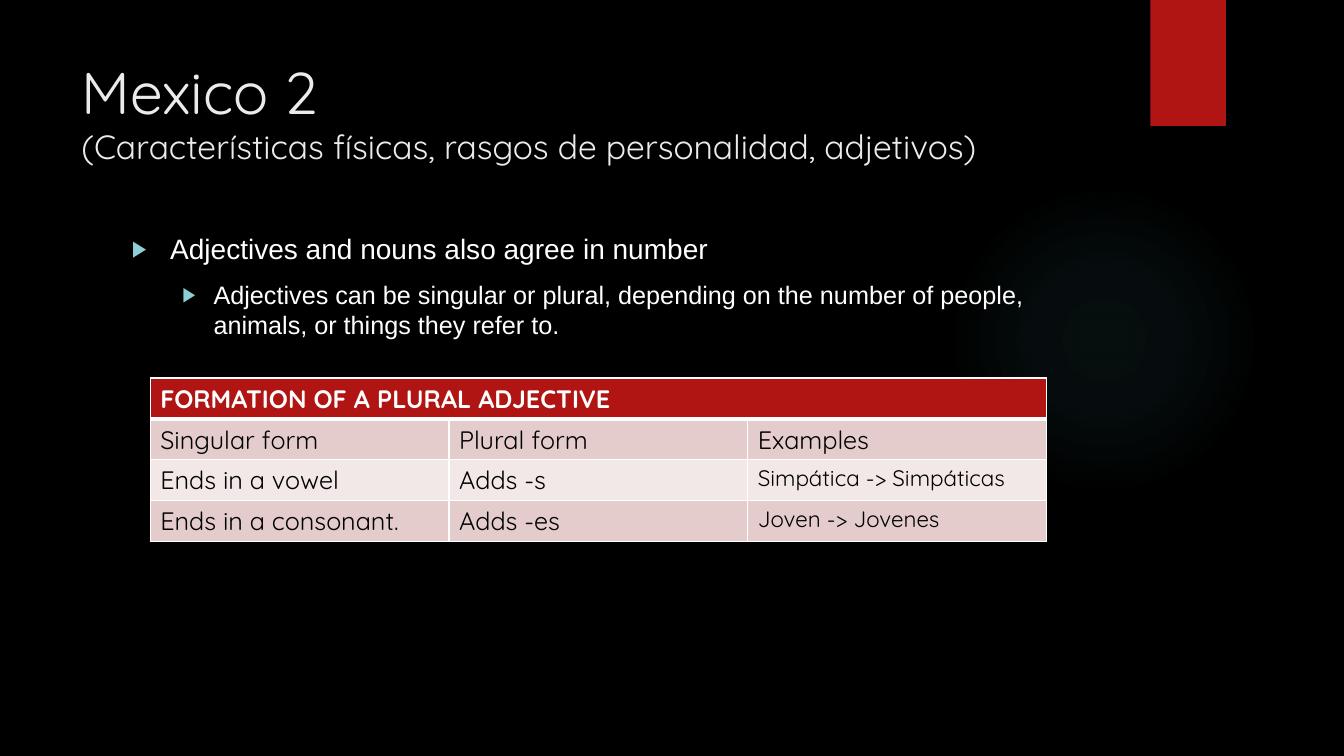
"""Builds the slide on forming plural adjectives in Spanish."""
import pptx
import pptx.dml.color
import pptx.enum.shapes
import pptx.enum.text
import pptx.oxml
import pptx.oxml.ns
import pptx.util
from pptx.util import Inches, Pt

TITLE_LINES = [
    ("Mexico 2", 42),
    ("(Características físicas, rasgos de personalidad, adjetivos)", 24),
]
BULLETS = [
    ("Adjectives and nouns also agree in number", 20, 0.38, 0.38),
    ("Adjectives can be singular or plural, depending on the number of "
     "people, animals, or things they refer to.", 18, 0.81, 0.31),
]
TABLE_HEADING = "FORMATION OF A PLURAL ADJECTIVE"
TABLE_ROWS = [
    ("Singular form", "Plural form", "Examples"),
    ("Ends in a vowel", "Adds -s", "Simpática -> Simpáticas"),
    ("Ends in a consonant.", "Adds -es", "Joven -> Jovenes"),
]
BAND_COLORS = ["E4CCCC", "F2E8E7"]
GLOW_STOPS = [(0, 7), (36, 6), (69, 0)]
RED, WHITE, BLACK = "B01513", "FFFFFF", "000000"
COLUMN_WIDTH, ROW_HEIGHT = 2.963, 0.405
NAMESPACE = pptx.oxml.ns.nsdecls("a")


def color(value):
    return pptx.dml.color.RGBColor.from_string(value)


def style(font, name, size, value, bold=False):
    font.name = name
    font.size = Pt(size)
    font.bold = bold
    font.color.rgb = color(value)


def add_plain_shape(slide, kind, left, top, width, height):
    shape = slide.shapes.add_shape(
        kind, Inches(left), Inches(top), Inches(width), Inches(height))
    shape.shadow.inherit = False
    shape.line.fill.background()
    return shape


def add_glow(slide):
    glow = add_plain_shape(
        slide, pptx.enum.shapes.MSO_SHAPE.OVAL, 9.41, 1.83, 3.08, 3.08)
    glow.fill.background()
    stops = "".join(
        f'<a:gs pos="{position * 1000}"><a:srgbClr val="50B9C1">'
        f'<a:alpha val="{alpha * 1000}"/></a:srgbClr></a:gs>'
        for position, alpha in GLOW_STOPS)
    gradient = pptx.oxml.parse_xml(
        f'<a:gradFill {NAMESPACE}><a:gsLst>{stops}</a:gsLst><a:path path="circle">'
        '<a:fillToRect l="50000" t="50000" r="50000" b="50000"/></a:path></a:gradFill>')
    properties = glow.element.spPr
    properties.replace(properties.find(pptx.oxml.ns.qn("a:noFill")), gradient)


def add_text_frame(slide, left, top, width, height):
    box = slide.shapes.add_textbox(
        Inches(left), Inches(top), Inches(width), Inches(height))
    box.text_frame.word_wrap = True
    box.text_frame.vertical_anchor = pptx.enum.text.MSO_ANCHOR.TOP
    return box.text_frame


def add_title(slide):
    paragraph = add_text_frame(slide, 0.71, 0.5, 10.29, 1.53).paragraphs[0]
    paragraph.text = "\v".join(text for text, size in TITLE_LINES)
    for run, (text, size) in zip(paragraph.runs, TITLE_LINES):
        style(run.font, "Quicksand", size, "EBEBEB")


def add_bullets(slide):
    frame = add_text_frame(slide, 1.21, 2.25, 9.78, 4.59)
    frame.text = "\n".join(bullet[0] for bullet in BULLETS)
    for level, (text, size, margin, hanging) in enumerate(BULLETS):
        paragraph = frame.paragraphs[level]
        paragraph.level = level
        if level:
            paragraph.space_before = Pt(10)
        properties = paragraph._p.get_or_add_pPr()
        properties.set("marL", str(Inches(margin)))
        properties.set("indent", str(-Inches(hanging)))
        for content in ('buClr {}><a:srgbClr val="8AD0D6"/></a:buClr>',
                        'buSzPct {} val="80000"/>',
                        'buFont {} typeface="Arial"/>',
                        'buChar {} char="▶"/>'):
            properties.append(pptx.oxml.parse_xml("<a:" + content.format(NAMESPACE)))
        style(paragraph.runs[0].font, "Arial", size, WHITE)


def format_cell(cell, fill, bottom_width):
    properties = cell._tc.get_or_add_tcPr()
    for side, width in (("L", 1), ("R", 1), ("T", 1), ("B", bottom_width)):
        properties.append(pptx.oxml.parse_xml(
            f'<a:ln{side} {NAMESPACE} w="{Pt(width)}"><a:solidFill>'
            f'<a:srgbClr val="{WHITE}"/></a:solidFill></a:ln{side}>'))
    cell.fill.solid()
    cell.fill.fore_color.rgb = color(fill)


def add_adjective_table(slide):
    rows = [(TABLE_HEADING, "", "")] + TABLE_ROWS
    table = slide.shapes.add_table(
        len(rows), 3, Inches(1.49), Inches(3.75),
        Inches(3 * COLUMN_WIDTH), Inches(len(rows) * ROW_HEIGHT)).table
    for column in table.columns:
        column.width = Inches(COLUMN_WIDTH)
    for row_index, row in enumerate(rows):
        table.rows[row_index].height = Inches(ROW_HEIGHT)
        heading = row_index == 0
        fill = RED if heading else BAND_COLORS[(row_index - 1) % 2]
        for column_index, text in enumerate(row):
            cell = table.cell(row_index, column_index)
            format_cell(cell, fill, 3 if heading else 1)
            if text:
                cell.text_frame.text = text
                size = 16 if column_index == 2 and row_index > 1 else 18
                style(cell.text_frame.paragraphs[0].runs[0].font, "Quicksand",
                      size, WHITE if heading else BLACK, heading)
    table.cell(0, 0).merge(table.cell(0, 2))


def main():
    presentation = pptx.Presentation()
    presentation.slide_width = Inches(13.33)
    presentation.slide_height = Inches(7.5)
    slide = presentation.slides.add_slide(presentation.slide_layouts[6])
    slide.background.fill.solid()
    slide.background.fill.fore_color.rgb = color(BLACK)
    add_glow(slide)
    tab = add_plain_shape(
        slide, pptx.enum.shapes.MSO_SHAPE.RECTANGLE, 11.41, 0, 0.75, 1.25)
    tab.fill.solid()
    tab.fill.fore_color.rgb = color(RED)
    add_title(slide)
    add_bullets(slide)
    add_adjective_table(slide)
    presentation.save("out.pptx")


if __name__ == "__main__":
    main()
